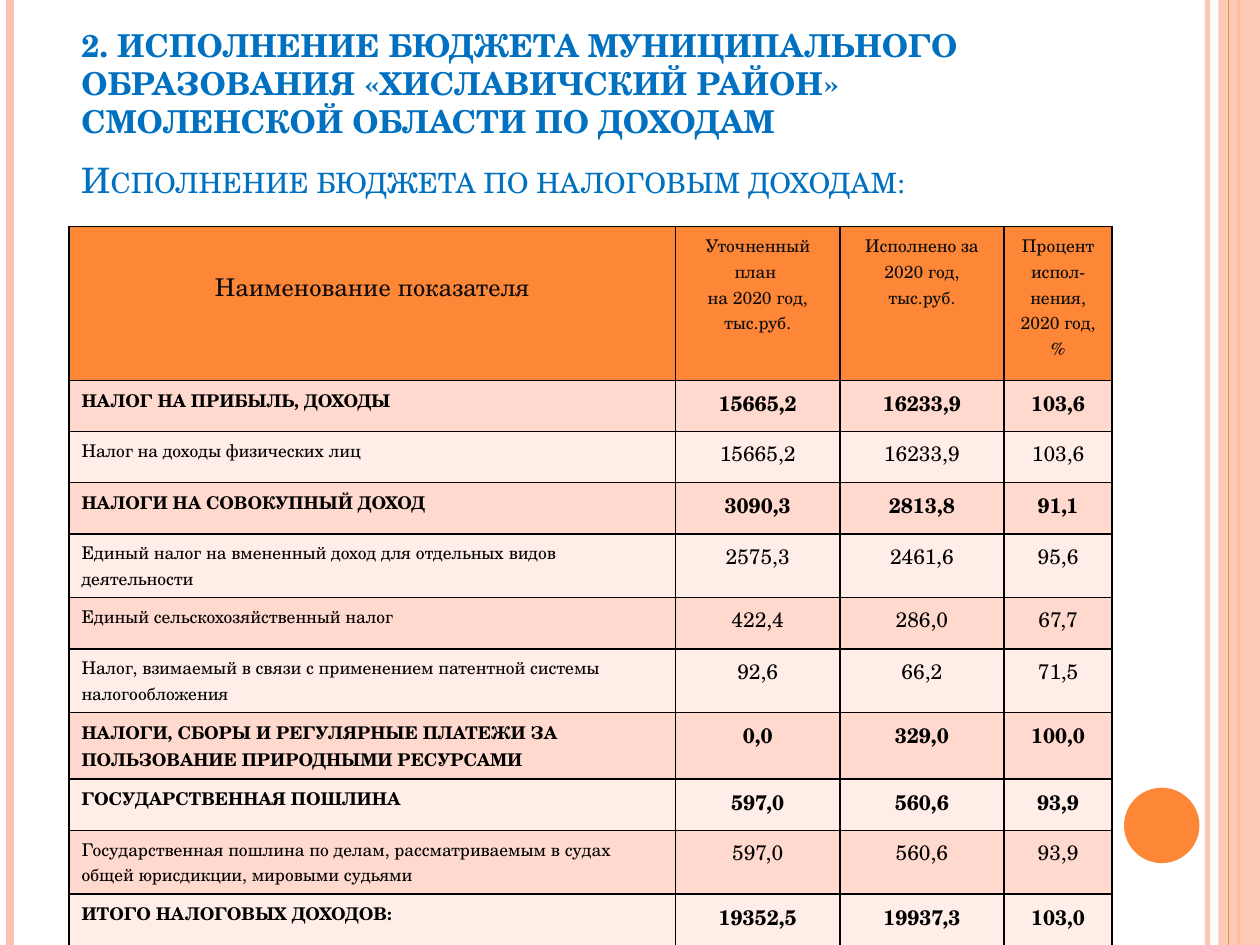
from typing import NamedTuple

from lxml.etree import SubElement
from pptx import Presentation
from pptx.dml.color import RGBColor
from pptx.enum.shapes import MSO_CONNECTOR as CONN, MSO_SHAPE as SHAPE
from pptx.enum.text import MSO_ANCHOR as ANCHOR, MSO_AUTO_SIZE as AUTO, PP_ALIGN as ALIGN
from pptx.oxml import parse_xml
from pptx.oxml.ns import nsdecls, qn
from pptx.util import Cm, Pt

FONT = "TeX Gyre Schola"
COLORS = {
    "title": "0070C0", "orange": "FE8637", "peach": "FEC3AE", "odd": "FFD9CE",
    "even": "FFEDE8", "head_text": "0D0D0D", "black": "000000",
}
WIDTH, HEIGHT = 25.4, 19.05
LEFT = 1.39


class Stripe(NamedTuple):
    x: float
    color: str
    weight: float
    alpha: int = 100


class Income(NamedTuple):
    name: str
    plan: str
    actual: str
    percent: str
    bold: bool = False


STRIPES = [
    Stripe(24.34, "peach", 3, 93),
    Stripe(0.21, "peach", 4.5),
    Stripe(24.97, "orange", 1.5),
]
TOP_STRIPE = Stripe(24.77, "orange", 0.75)
COLUMNS = [12.23, 3.31, 3.31, 2.18]
HEADER = [
    "Наименование показателя",
    "Уточненный план \nна 2020 год, тыс.руб.",
    "Исполнено за 2020 год, тыс.руб.",
    "Процент испол-нения, 2020 год, %",
]
INCOMES = [
    Income("НАЛОГ НА ПРИБЫЛЬ, ДОХОДЫ", "15665,2", "16233,9", "103,6", True),
    Income("Налог на доходы физических лиц", "15665,2", "16233,9", "103,6"),
    Income("НАЛОГИ НА СОВОКУПНЫЙ ДОХОД", "3090,3", "2813,8", "91,1", True),
    Income("Единый налог на вмененный доход для отдельных видов деятельности",
           "2575,3", "2461,6", "95,6"),
    Income("Единый сельскохозяйственный налог", "422,4", "286,0", "67,7"),
    Income("Налог, взимаемый в связи с применением патентной системы налогообложения",
           "92,6", "66,2", "71,5"),
    Income("НАЛОГИ, СБОРЫ И РЕГУЛЯРНЫЕ ПЛАТЕЖИ ЗА ПОЛЬЗОВАНИЕ ПРИРОДНЫМИ РЕСУРСАМИ",
           "0,0", "329,0", "100,0", True),
    Income("ГОСУДАРСТВЕННАЯ ПОШЛИНА", "597,0", "560,6", "93,9", True),
    Income("Государственная пошлина по делам, рассматриваемым в судах общей юрисдикции, "
           "мировыми судьями", "597,0", "560,6", "93,9"),
    Income("ИТОГО НАЛОГОВЫХ ДОХОДОВ:", "19352,5", "19937,3", "103,0", True),
]


def rgb(name: str) -> RGBColor:
    return RGBColor.from_string(COLORS[name])


def set_alpha(element, percent: int) -> None:
    color = element.find(".//" + qn("a:srgbClr"))
    SubElement(color, qn("a:alpha")).set("val", str(percent * 1000))


def set_font(p, size: float, color: str, bold: bool = False) -> None:
    p.font.name, p.font.size, p.font.bold = FONT, Pt(size), bold
    p.font.color.rgb = rgb(color)


def add_stripe(slide, stripe: Stripe) -> None:
    s = slide.shapes.add_connector(
        CONN.STRAIGHT, Cm(stripe.x), 0, Cm(stripe.x), Cm(HEIGHT))
    s.line.color.rgb, s.line.width = rgb(stripe.color), Pt(stripe.weight)
    sp_pr = s._element.spPr
    if stripe.alpha < 100:
        set_alpha(sp_pr, stripe.alpha)
    SubElement(sp_pr, qn("a:effectLst"))


def add_plain(slide, kind, x: float, y: float, w: float, h: float, color: str):
    s = slide.shapes.add_shape(kind, Cm(x), Cm(y), Cm(w), Cm(h))
    s.shadow.inherit = False
    s.fill.solid()
    s.fill.fore_color.rgb = rgb(color)
    s.line.fill.background()
    return s


def fill_cell(cell, text: str, fill: str, size: float, color: str = "black",
              bold: bool = False, align=ALIGN.CENTER) -> None:
    cell.fill.solid()
    cell.fill.fore_color.rgb = rgb(fill)
    cell.text_frame.text = text
    for p in cell.text_frame.paragraphs:
        p.alignment = align
        set_font(p, size, color, bold)
    # Borders come before the fill in the cell properties
    for i, side in enumerate(("lnL", "lnR", "lnT", "lnB")):
        cell._tc.tcPr.insert(i, parse_xml(
            f'<a:{side} {nsdecls("a")} w="12700"><a:solidFill>'
            f'<a:srgbClr val="{COLORS["black"]}"/></a:solidFill></a:{side}>'))


def add_income_table(slide) -> None:
    heights = [3.1] + [1.03] * len(INCOMES)
    table = slide.shapes.add_table(
        len(heights), len(COLUMNS), Cm(LEFT), Cm(4.57),
        Cm(sum(COLUMNS)), Cm(sum(heights))).table
    for column, width in zip(table.columns, COLUMNS):
        column.width = Cm(width)
    for row, height in zip(table.rows, heights):
        row.height = Cm(height)

    for i, text in enumerate(HEADER):
        fill_cell(table.cell(0, i), text, "orange", 10 if i else 14, "head_text")
    table.cell(0, 0).margin_top = Cm(0.85)

    for i, income in enumerate(INCOMES, 1):
        fill = "odd" if i % 2 else "even"
        fill_cell(table.cell(i, 0), income.name, fill, 10,
                  bold=income.bold, align=ALIGN.LEFT)
        for j, value in enumerate((income.plan, income.actual, income.percent), 1):
            fill_cell(table.cell(i, j), value, fill, 12, bold=income.bold)


def main() -> None:
    prs = Presentation()
    prs.slide_width, prs.slide_height = Cm(WIDTH), Cm(HEIGHT)
    slide = prs.slides.add_slide(prs.slide_layouts[5])

    # Side decoration
    for stripe in STRIPES:
        add_stripe(slide, stripe)
    band = add_plain(slide, SHAPE.RECTANGLE, 24.56, 0, 0.84, HEIGHT, "peach")
    set_alpha(band._element.spPr, 87)
    add_stripe(slide, TOP_STRIPE)
    add_plain(slide, SHAPE.OVAL, 22.66, 15.88, 1.52, 1.52, "orange")

    # Title in small capitals
    title = slide.shapes.title
    title.left, title.top, title.width, title.height = Cm(LEFT), Cm(0.99), Cm(20.75), Cm(3.18)
    tf = title.text_frame
    tf.text = "Исполнение бюджета по налоговым доходам:"
    tf.vertical_anchor, tf.word_wrap, tf.auto_size = ANCHOR.BOTTOM, True, AUTO.NONE
    p = tf.paragraphs[0]
    p.alignment = ALIGN.LEFT
    set_font(p, 20, "title")
    p.runs[0].font._element.set("cap", "small")

    add_income_table(slide)

    # Section heading
    heading = slide.shapes.add_textbox(Cm(LEFT), Cm(0.4), Cm(21.23), Cm(2.57))
    tf = heading.text_frame
    tf.word_wrap, tf.auto_size = True, AUTO.SHAPE_TO_FIT_TEXT
    tf.text = ("2. ИСПОЛНЕНИЕ БЮДЖЕТА МУНИЦИПАЛЬНОГО ОБРАЗОВАНИЯ "
               "«ХИСЛАВИЧСКИЙ РАЙОН» СМОЛЕНСКОЙ ОБЛАСТИ ПО ДОХОДАМ")
    set_font(tf.paragraphs[0], 18, "title", True)

    prs.save("out.pptx")


if __name__ == "__main__":
    main()
